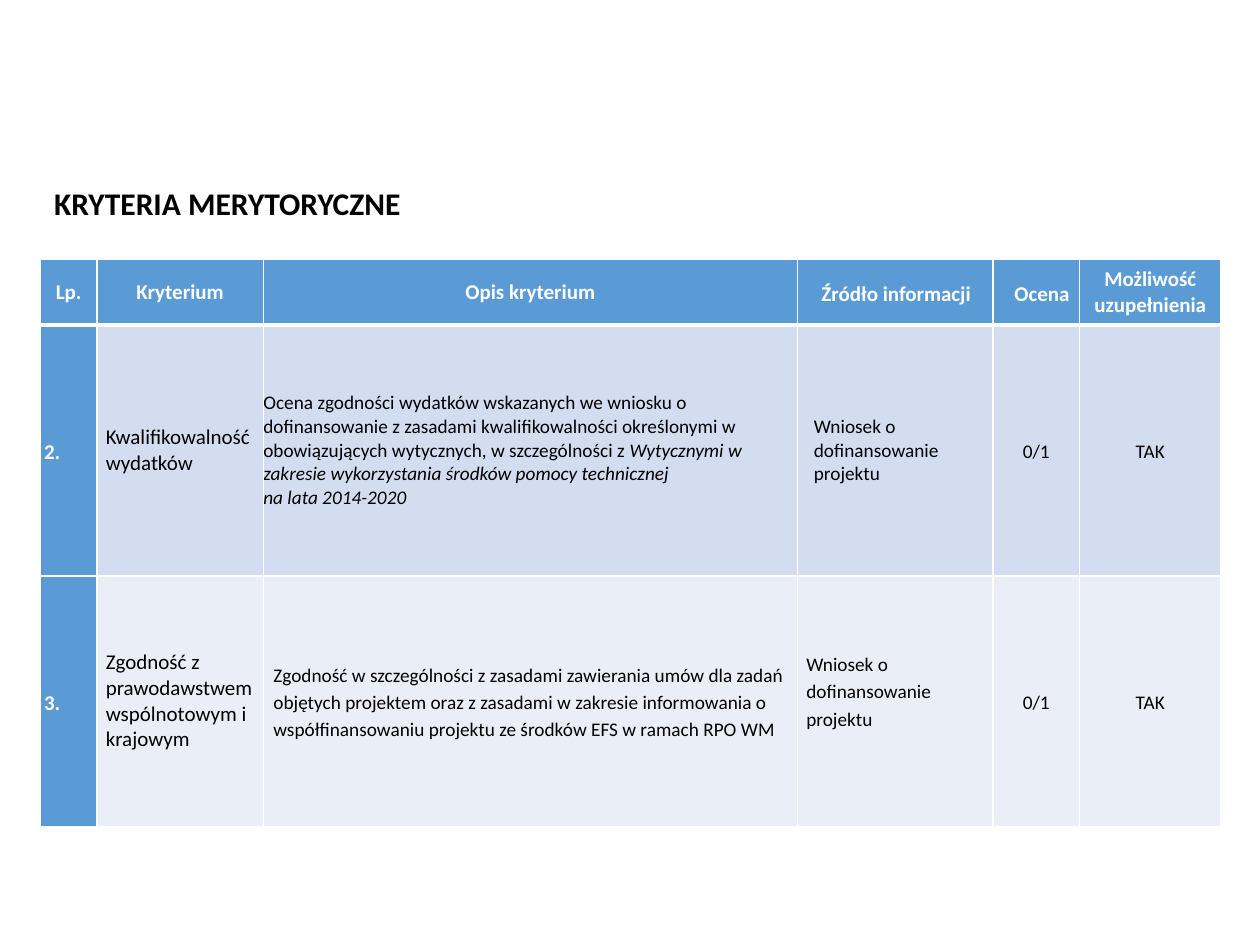
from dataclasses import dataclass

from lxml import etree
from pptx import Presentation
from pptx import util as u
from pptx.dml.color import RGBColor
from pptx.enum import text
from pptx.oxml.ns import qn


@dataclass(frozen=True)
class Theme:
    font: str = "Calibri"
    blue: str = "5B9BD5"
    bands: tuple = ("D2DEEF", "EAEFF7")
    white: str = "FFFFFF"
    black: str = "000000"
    title: int = 18
    label: int = 12
    body: int = 11
    thin: int = 1
    thick: int = 3


T = Theme()
W, H = 10, 7.5
TITLE_BOX = (0.033 * W, 0.188 * H, 0.298 * W, 0.053 * H)
TABLE_BOX = (0.032 * W, 0.2747 * H, 0.937 * W, 0.6 * H)
COLS = (0.45, 1.32, 4.24, 1.55, 0.69, 1.12)
ROWS = (0.52, 1.99, 1.99)
CENTER = text.PP_ALIGN.CENTER
LEFT = text.PP_ALIGN.LEFT
NONE = (0, 0, 0, 0)
TIGHT = (0.03, 0, 0.03, 0)
SIDES = (0.07, 0, 0.07, 0)
LIFTED = (0.07, 0, 0.07, 0.17)
NORMAL = (0.1, 0.05, 0.1, 0.05)

HEADER = (
    ("Lp.", {}),
    ("Kryterium", {}),
    ("Opis kryterium", {}),
    ("Źródło informacji", dict(inset=NONE, align=LEFT, first=0.19, spacing=1.15)),
    ("Ocena", dict(inset=NONE, left=0.09, spacing=1.15)),
    ("Możliwość uzupełnienia", {}),
)
SOURCE = "Wniosek o dofinansowanie projektu"
CRITERIA = (
    (
        "2.",
        "Kwalifikowalność wydatków",
        (
            (
                ("Ocena zgodności wydatków wskazanych we wniosku o dofinansowanie "
                 "z zasadami kwalifikowalności określonymi w obowiązujących "
                 "wytycznych, w szczególności z ", False),
                ("Wytycznymi w zakresie wykorzystania środków pomocy technicznej", True),
            ),
            (("na lata 2014-2020", True),),
        ),
        {},
        dict(inset=SIDES, left=0.06),
    ),
    (
        "3.",
        "Zgodność z prawodawstwem wspólnotowym i krajowym",
        "Zgodność w szczególności z zasadami zawierania umów dla zadań objętych "
        "projektem oraz z zasadami w zakresie informowania o współfinansowaniu "
        "projektu ze środków EFS w ramach RPO WM",
        dict(left=0.08, spacing=1.15),
        dict(inset=LIFTED, spacing=1.15),
    ),
)


def write(tf, content, size=T.body, color=T.black, bold=False, align=LEFT,
          left=0, first=0, spacing=1.0):
    paragraphs = (((content, False),),) if isinstance(content, str) else content
    for i, runs in enumerate(paragraphs):
        p = tf.paragraphs[0] if i == 0 else tf.add_paragraph()
        p.alignment, p.line_spacing = align, spacing
        p.space_before = p.space_after = u.Pt(0)
        pPr = p._p.get_or_add_pPr()
        pPr.set("marL", str(u.Inches(left)))
        pPr.set("indent", str(u.Inches(first)))
        for words, italic in runs:
            r = p.add_run()
            r.text = words
            f = r.font
            f.name, f.size, f.bold, f.italic = T.font, u.Pt(size), bold, italic
            f.color.rgb = RGBColor.from_string(color)


def border(cell, **widths):
    tcPr = cell._tc.get_or_add_tcPr()
    for i, side in enumerate("LRTB"):
        ln = etree.Element(qn(f"a:ln{side}"), w=str(u.Pt(widths.get(side, T.thin))))
        fill = etree.SubElement(ln, qn("a:solidFill"))
        etree.SubElement(fill, qn("a:srgbClr"), val=T.white)
        tcPr.insert(i, ln)


def fill_cell(cell, content, fill, inset=NORMAL, edges=None, **fmt):
    cell.fill.solid()
    cell.fill.fore_color.rgb = RGBColor.from_string(fill)
    cell.vertical_anchor = text.MSO_ANCHOR.MIDDLE
    (cell.margin_left, cell.margin_top,
     cell.margin_right, cell.margin_bottom) = map(u.Inches, inset)
    border(cell, **(edges or {}))
    write(cell.text_frame, content, **fmt)


def add_title(s, box):
    sp = s.shapes.title
    sp.left, sp.top, sp.width, sp.height = map(u.Inches, box)
    tf = sp.text_frame
    tf.word_wrap = False
    tf.auto_size = text.MSO_AUTO_SIZE.NONE
    tf.vertical_anchor = text.MSO_ANCHOR.MIDDLE
    write(tf, "KRYTERIA MERYTORYCZNE", size=T.title, bold=True)


def add_criteria(s, box):
    x, y, w, h = box
    tbl = s.shapes.add_table(len(ROWS), len(COLS), *map(u.Inches, box)).table
    for col, share in zip(tbl.columns, COLS):
        col.width = u.Inches(w * share / sum(COLS))
    for row, share in zip(tbl.rows, ROWS):
        row.height = u.Inches(h * share / sum(ROWS))

    strong = dict(size=T.label, color=T.white, bold=True)
    for c, (label, fmt) in enumerate(HEADER):
        fill_cell(tbl.cell(0, c), label, T.blue, edges=dict(B=T.thick),
                  **{"align": CENTER, **strong, **fmt})

    for i, (number, name, description, description_fmt, source_fmt) in enumerate(CRITERIA):
        band = T.bands[i]
        centered = dict(inset=SIDES, align=CENTER, spacing=1.15)
        cells = (
            (number, T.blue, dict(inset=TIGHT, spacing=1.15, **strong)),
            (name, band, dict(inset=SIDES, size=T.label)),
            (description, band, dict(inset=NONE, **description_fmt)),
            (SOURCE, band, source_fmt),
            ("0/1", band, centered),
            ("TAK", band, centered),
        )
        edges = dict(T=T.thick) if i == 0 else {}
        for c, (content, fill, fmt) in enumerate(cells):
            fill_cell(tbl.cell(i + 1, c), content, fill, edges=edges, **fmt)


def main():
    prs = Presentation()
    prs.slide_width, prs.slide_height = u.Inches(W), u.Inches(H)
    s = prs.slides.add_slide(prs.slide_layouts[5])
    add_title(s, TITLE_BOX)
    add_criteria(s, TABLE_BOX)
    prs.save("out.pptx")


if __name__ == "__main__":
    main()
